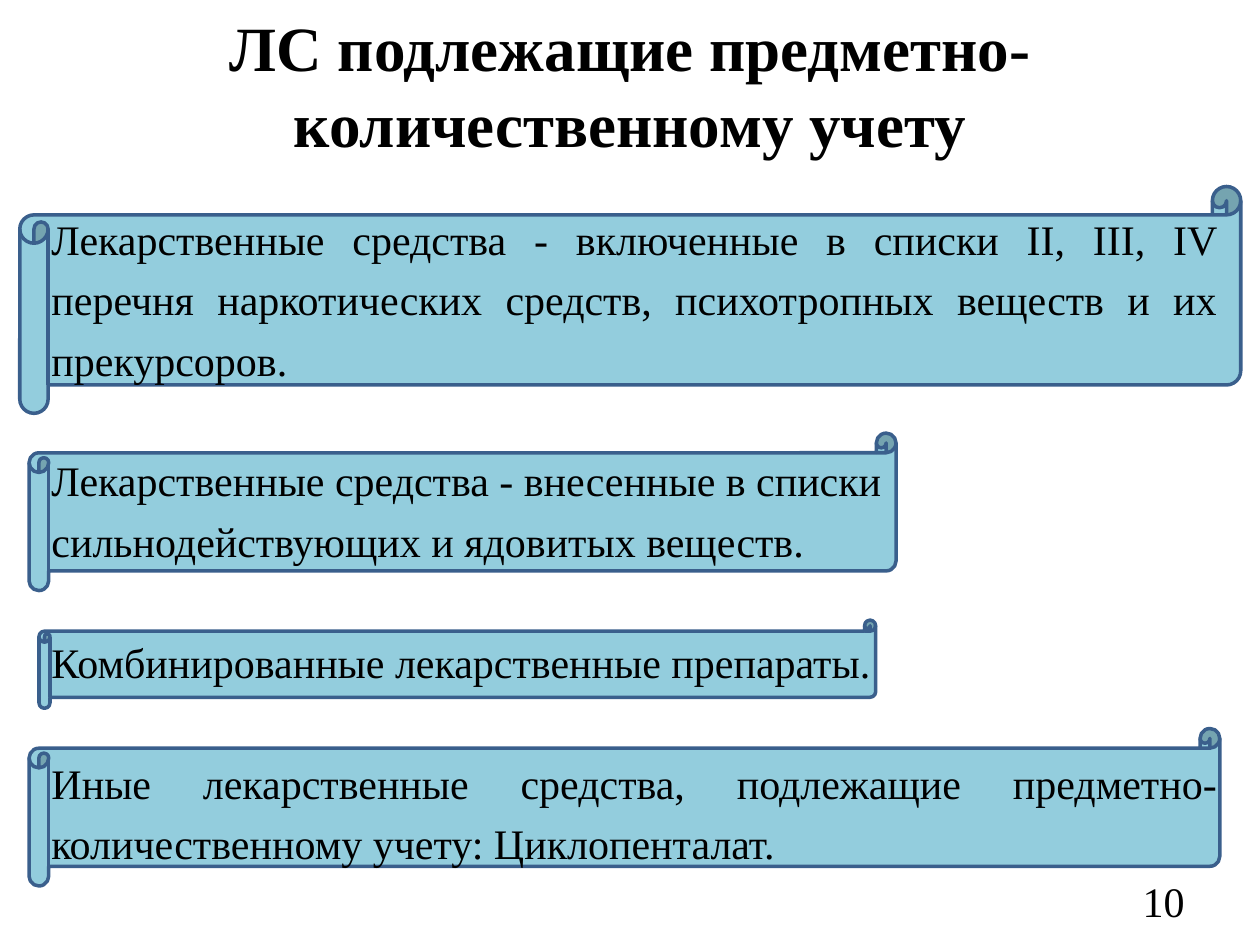
from pptx import Presentation
from pptx.dml.color import RGBColor
from pptx.enum import shapes, text
from pptx.util import Pt

# Content
TITLE = "ЛС подлежащие предметно-количественному учету"
PAGE_NUMBER = "10"
DRUG_GROUPS = [
    ["Лекарственные средства - включенные в списки II, III, IV перечня "
     "наркотических средств, психотропных веществ и их прекурсоров."],
    ["Лекарственные средства - внесенные в списки",
     "сильнодействующих и ядовитых веществ."],
    ["Комбинированные лекарственные препараты."],
    ["Иные лекарственные средства, подлежащие "
     "предметно-количественному учету: Циклопенталат."],
]
# Scrolls behind the groups, back to front: left, top, width, height
SCROLLS = [
    (16.6, 416.3, 680.4, 90),
    (22.3, 354.4, 478.1, 50.4),
    (16.6, 247.5, 495.4, 90),
    (11.3, 106.6, 697.7, 129.6),
]
FONT = "Times New Roman"
BODY_SIZE = 24
LINE_SPACING = 1.2
GROUP_GAP = 34.5  # one line of body text


def colour(hex_string):
    return RGBColor.from_string(hex_string)


def add_text(slide, box, paragraphs, size, align, anchor, bold=False):
    frame = slide.shapes.add_textbox(*map(Pt, box)).text_frame
    frame.word_wrap = True
    frame.vertical_anchor = anchor
    for index, words in enumerate(paragraphs):
        paragraph = frame.paragraphs[0] if index == 0 else frame.add_paragraph()
        paragraph.text = words
        paragraph.alignment = align
        font = paragraph.font
        font.name, font.size, font.bold = FONT, Pt(size), bold
        font.color.rgb = colour("000000")
    return frame


def main():
    prs = Presentation()
    prs.slide_width, prs.slide_height = Pt(720), Pt(540)
    slide = prs.slides.add_slide(prs.slide_layouts[6])

    # Scrolls
    for box in SCROLLS:
        scroll = slide.shapes.add_shape(
            shapes.MSO_SHAPE.HORIZONTAL_SCROLL, *map(Pt, box))
        scroll.shadow.inherit = False
        scroll.fill.solid()
        scroll.fill.fore_color.rgb = colour("93CDDD")
        scroll.line.color.rgb = colour("3A5F8C")
        scroll.line.width = Pt(2)

    # Title
    add_text(slide, (36, 0, 648, 96), [TITLE], 36,
             text.PP_ALIGN.CENTER, text.MSO_ANCHOR.MIDDLE, bold=True)

    # Drug groups, set one line apart
    lines = [line for group in DRUG_GROUPS for line in group]
    group_starts = [group[0] for group in DRUG_GROUPS[1:]]
    body = add_text(slide, (22.3, 112.5, 680.4, 410.4), lines, BODY_SIZE,
                    text.PP_ALIGN.JUSTIFY, text.MSO_ANCHOR.TOP)
    for paragraph in body.paragraphs:
        paragraph.line_spacing = LINE_SPACING
        if paragraph.text in group_starts:
            paragraph.space_before = Pt(GROUP_GAP)

    # Page number
    add_text(slide, (516, 500.5, 168, 28.8), [PAGE_NUMBER], BODY_SIZE,
             text.PP_ALIGN.RIGHT, text.MSO_ANCHOR.MIDDLE)

    prs.save("out.pptx")


if __name__ == "__main__":
    main()
